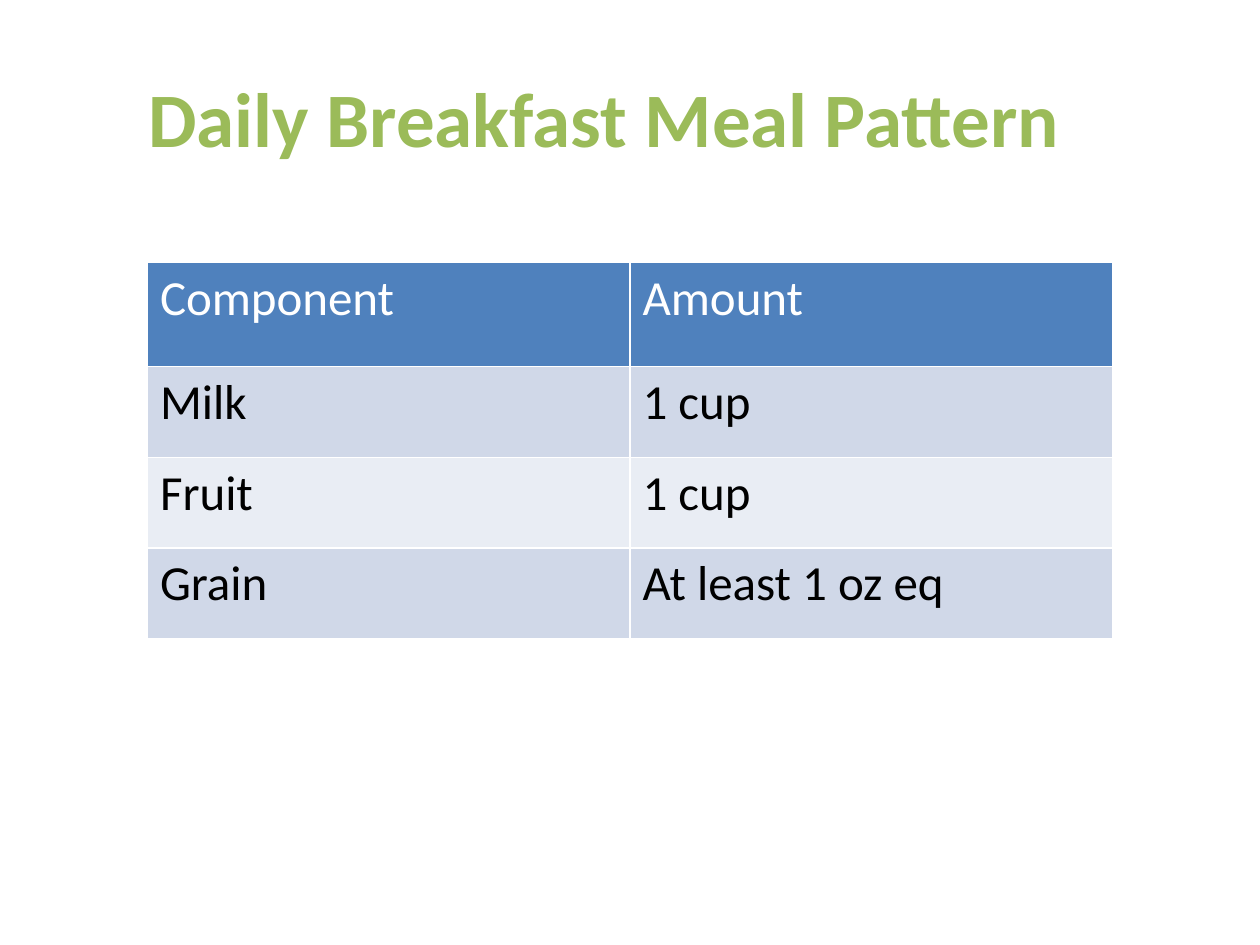
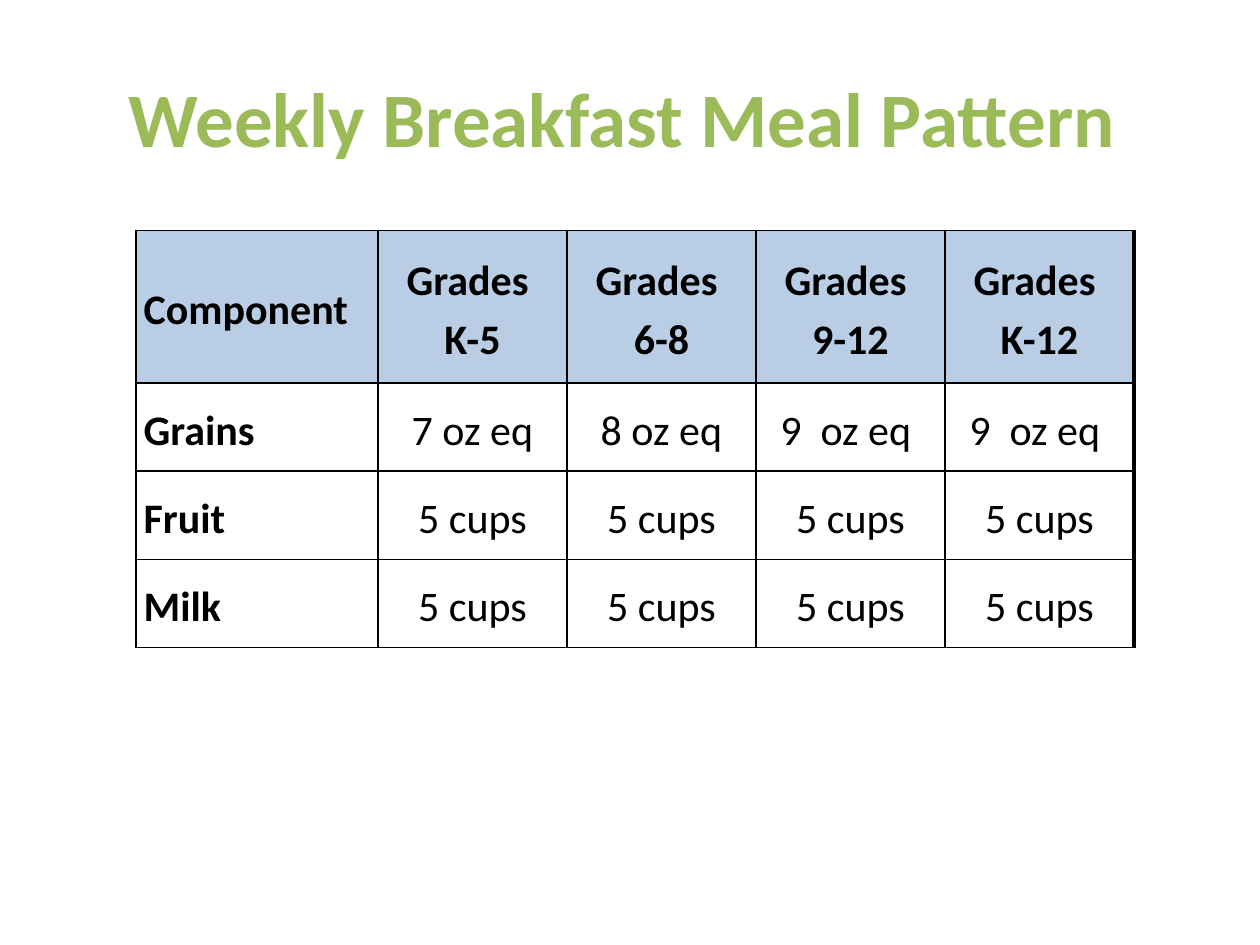
from lxml import etree
from pptx import Presentation
from pptx.dml.color import RGBColor
from pptx.enum.text import MSO_ANCHOR, PP_ALIGN
from pptx.oxml.ns import qn
from pptx.util import Inches, Pt

GREEN = RGBColor(0x9B, 0xBB, 0x59)
BLUE = RGBColor(0x4F, 0x81, 0xBD)
BAND = RGBColor(0xD0, 0xD8, 0xE8)
PALE = RGBColor(0xE9, 0xED, 0xF4)
SKY = RGBColor(0xB9, 0xCD, 0xE5)
WHITE = RGBColor(0xFF, 0xFF, 0xFF)
BLACK = RGBColor(0x00, 0x00, 0x00)
FONT = "Calibri"
LEFT, CENTER = PP_ALIGN.LEFT, PP_ALIGN.CENTER
TOP, MIDDLE = MSO_ANCHOR.TOP, MSO_ANCHOR.MIDDLE

DAILY = [
    ["Component", "Amount"],
    ["Milk", "1 cup"],
    ["Fruit", "1 cup"],
    ["Grain", "At least 1 oz eq"],
]
WEEKLY = [
    ["Component"] + [f"Grades \n{grade}" for grade in ("K-5", "6-8", "9-12", "K-12")],
    ["Grains", "7 oz eq", "8 oz eq", "9  oz eq ", "9  oz eq "],
    ["Fruit"] + ["5 cups"] * 4,
    ["Milk"] + ["5 cups"] * 4,
]


def add_run(para, text, size, color, bold=False):
    run = para.add_run()
    run.text = text
    font = run.font
    font.name, font.size, font.bold = FONT, Pt(size), bold
    font.color.rgb = color


def add_title(slide, text, left, width):
    box = slide.shapes.add_textbox(Inches(left), Inches(0.3), Inches(width), Inches(1.25))
    frame = box.text_frame
    frame.word_wrap = True
    frame.vertical_anchor = MIDDLE
    add_run(frame.paragraphs[0], text, 44, GREEN, True)


def add_grid(slide, left, top, cols, rows):
    """Add an unstyled table with the given column widths and row heights."""
    frame = slide.shapes.add_table(len(rows), len(cols), Inches(left), Inches(top),
                                   Inches(sum(cols)), Inches(sum(rows)))
    grid = frame.table
    grid.first_row = grid.horz_banding = False
    for col, width in zip(grid.columns, cols):
        col.width = Inches(width)
    for row, height in zip(grid.rows, rows):
        row.height = Inches(height)
    return grid


def set_cell(cell, fill, line, right=1, pad=(0.1, 0.05), anchor=TOP):
    # Borders come before the fill in the cell properties
    props = cell._tc.get_or_add_tcPr()
    for side, width in (("L", 1), ("R", right), ("T", 1), ("B", 1)):
        edge = etree.SubElement(props, qn(f"a:ln{side}"), w=str(Pt(width)))
        solid = etree.SubElement(edge, qn("a:solidFill"))
        etree.SubElement(solid, qn("a:srgbClr"), val=str(line))
    cell.fill.solid()
    cell.fill.fore_color.rgb = fill
    cell.margin_left = cell.margin_right = Inches(pad[0])
    cell.margin_top = cell.margin_bottom = Inches(pad[1])
    cell.vertical_anchor = anchor


def daily_table(slide, left, top):
    grid = add_grid(slide, left, top, [3.83] * 2, [0.83] + [0.72] * 3)
    for r, row in enumerate(DAILY):
        fill = BLUE if r == 0 else BAND if r % 2 else PALE
        for c, text in enumerate(row):
            cell = grid.cell(r, c)
            set_cell(cell, fill, WHITE)
            add_run(cell.text_frame.paragraphs[0], text, 28, BLACK if r else WHITE)


def weekly_table(slide, left, top):
    grid = add_grid(slide, left, top, [1.92] + [1.5] * 4, [1.21] + [0.7] * 3)
    for r, row in enumerate(WEEKLY):
        for c, text in enumerate(row):
            cell = grid.cell(r, c)
            last = c == len(row) - 1
            set_cell(cell, WHITE if r else SKY, BLACK, 2.25 if last else 1, (0.06, 0), MIDDLE)
            frame = cell.text_frame
            for i, part in enumerate(text.split("\n")):
                para = frame.add_paragraph() if i else frame.paragraphs[0]
                para.alignment = CENTER if c else LEFT
                para.line_spacing = 1.15
                add_run(para, part, 24, BLACK, r == 0 or c == 0)


def main():
    deck = Presentation()
    deck.slide_width, deck.slide_height = Inches(10), Inches(7.5)
    blank = deck.slide_layouts[6]

    # Daily pattern
    slide = deck.slides.add_slide(blank)
    add_title(slide, "Daily Breakfast Meal Pattern", 1.08, 8.42)
    daily_table(slide, 1.17, 2.08)

    # Weekly pattern
    slide = deck.slides.add_slide(blank)
    add_title(slide, "Weekly Breakfast Meal Pattern", 0.92, 8.58)
    weekly_table(slide, 1.08, 1.83)

    deck.save("out.pptx")


if __name__ == "__main__":
    main()
